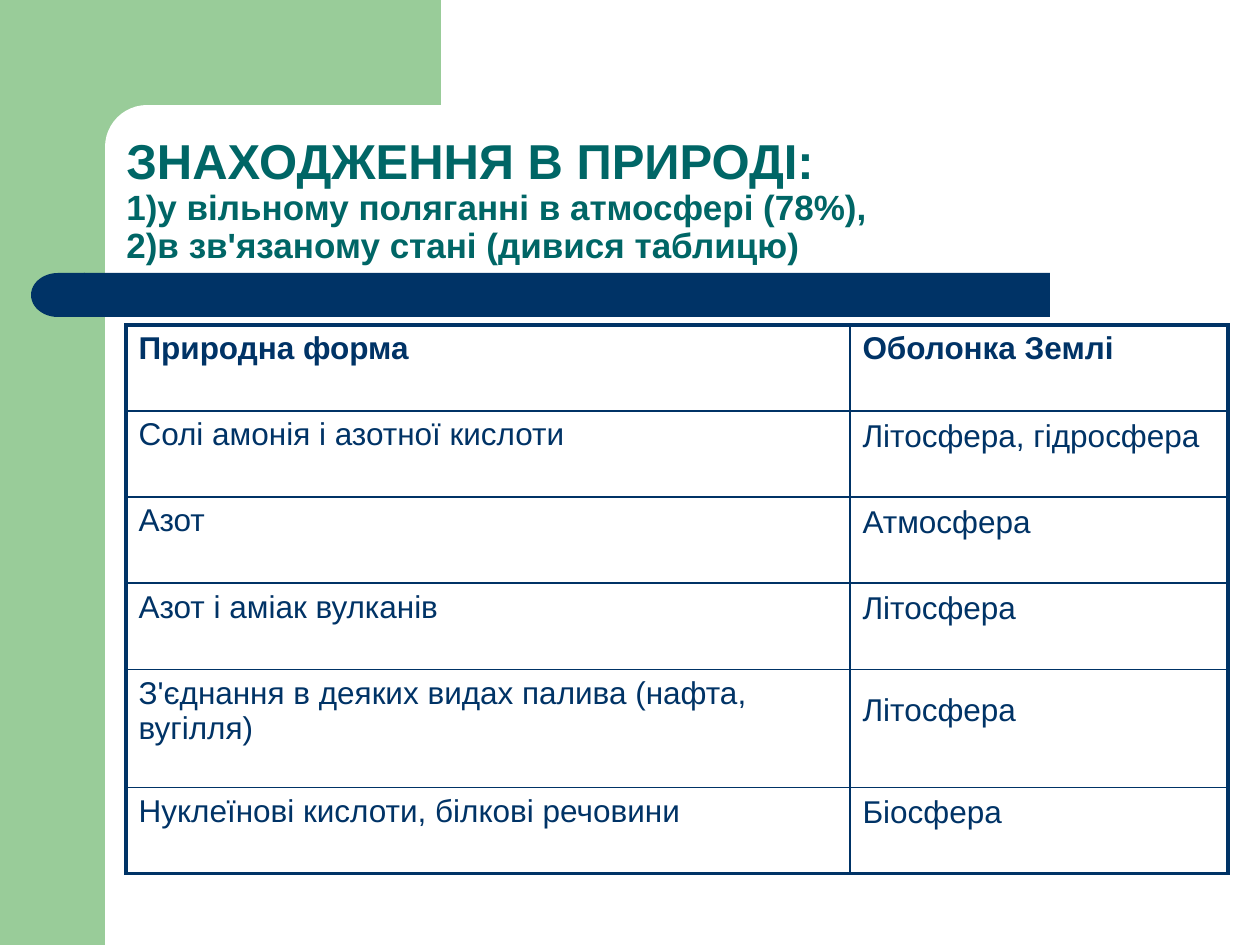
from pptx import Presentation
from pptx.dml.color import RGBColor
from pptx.enum.shapes import MSO_SHAPE as Kind
from pptx.enum.text import MSO_ANCHOR as Anchor
from pptx.oxml.ns import qn
from pptx.util import Pt
from lxml.etree import SubElement as Sub

SCALE = 914400 // 126
GREEN, NAVY, TEAL, WHITE = "99CC99", "003366", "006666", "FFFFFF"
ROWS = [
    ("Природна форма", "Оболонка Землі"),
    ("Солі амонія і азотної кислоти", "Літосфера, гідросфера"),
    ("Азот", "Атмосфера"),
    ("Азот і аміак вулканів", "Літосфера"),
    ("З'єднання в деяких видах палива (нафта, вугілля)", "Літосфера"),
    ("Нуклеїнові кислоти, білкові речовини", "Біосфера"),
]
HEIGHTS = [86, 86, 85, 86, 118, 86]
WIDTHS = [724, 378]


def px(*nums):
    """Turn pixels into EMU."""
    return [n * SCALE for n in nums]


def color(code):
    """Turn a hex string into a colour."""
    return RGBColor.from_string(code)


def style(font, size, code, bold):
    """Set the face, size, colour and weight of a font."""
    font.name, font.size, font.bold = "Arial", Pt(size), bold
    font.color.rgb = color(code)


def block(slide, kind, box, code, round=None):
    """Draw a plain filled shape."""
    shape = slide.shapes.add_shape(kind, *px(*box))
    shape.shadow.inherit = False
    shape.fill.solid()
    shape.fill.fore_color.rgb = color(code)
    shape.line.fill.background()
    if round is not None:
        shape.adjustments[0] = round
    return shape


def title(slide, box, lines):
    """Write the heading as one paragraph of broken lines."""
    frame = slide.shapes.add_textbox(*px(*box)).text_frame
    frame.word_wrap = True
    frame.vertical_anchor = Anchor.BOTTOM
    para = frame.paragraphs[0]
    para.line_spacing = 0.9
    for i, (text, size) in enumerate(lines):
        if i:
            para.add_line_break()
        run = para.add_run()
        run.text = text
        style(run.font, size, TEAL, True)


def border(cell, thick):
    """Rule the four sides of a cell, thick where asked."""
    props = cell._tc.get_or_add_tcPr()
    for i, side in enumerate(("L", "R", "T", "B")):
        width = Pt(2.25 if side in thick else 1)
        line = Sub(props, qn(f"a:ln{side}"), w=str(width))
        fill = Sub(line, qn("a:solidFill"))
        Sub(fill, qn("a:srgbClr"), val=NAVY)


def grid(slide, left, top):
    """Build the table of natural forms."""
    box = px(left, top, sum(WIDTHS), sum(HEIGHTS))
    table = slide.shapes.add_table(len(ROWS), len(WIDTHS), *box).table
    for col, width in zip(table.columns, px(*WIDTHS)):
        col.width = width
    for r, (row, height) in enumerate(zip(ROWS, px(*HEIGHTS))):
        table.rows[r].height = height
        for c, text in enumerate(row):
            cell = table.cell(r, c)
            cell.text = text
            style(cell.text_frame.paragraphs[0].font, 18, NAVY, r == 0)
            if r and c:
                cell.vertical_anchor = Anchor.MIDDLE
                cell.margin_bottom = px(42)[0]
            ends = {0: "T", len(ROWS) - 1: "B"}
            border(cell, "LR"[c] + ends.get(r, ""))
            cell.fill.background()


def main():
    """Build and save the slide."""
    deck = Presentation()
    deck.slide_width, deck.slide_height = px(1260, 945)
    slide = deck.slides.add_slide(deck.slide_layouts[6])
    block(slide, Kind.RECTANGLE, (0, 0, 105, 945), GREEN)
    block(slide, Kind.RECTANGLE, (94, 0, 347, 147), GREEN)
    block(slide, Kind.ROUNDED_RECTANGLE, (105, 105, 703, 84), WHITE, 0.5)
    block(slide, Kind.ROUNDED_RECTANGLE, (84, 273, 966, 44), NAVY, 0)
    block(slide, Kind.FLOWCHART_DELAY, (31, 273, 54, 44), NAVY).rotation = 180
    title(slide, (114, 115, 1102, 157), [
        ("ЗНАХОДЖЕННЯ В ПРИРОДІ:", 28),
        ("1)у вільному поляганні в атмосфері (78%),", 20),
        ("2)в зв'язаному стані (дивися таблицю)", 20),
    ])
    grid(slide, 126, 325)
    deck.save("out.pptx")


if __name__ == "__main__":
    main()
